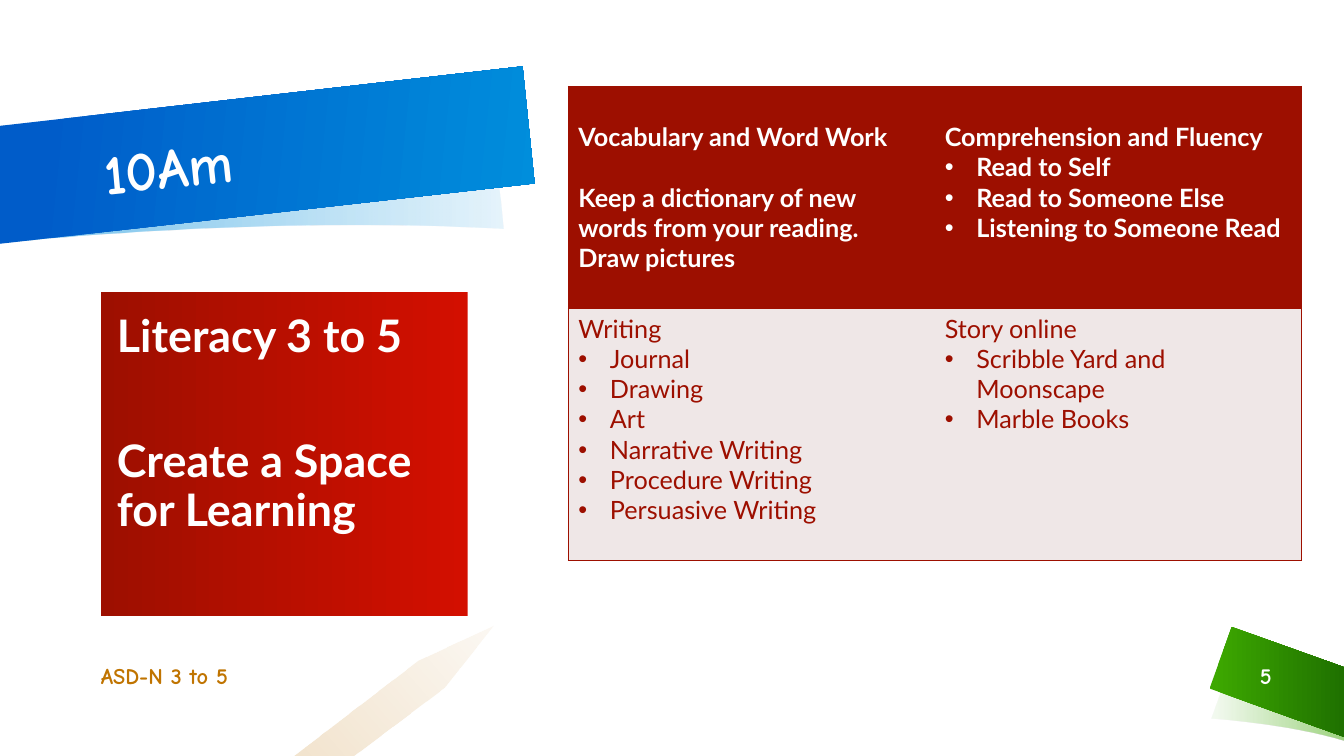
import pptx
import pptx.util
import pptx.dml.color
import pptx.enum.shapes
import pptx.enum.text
import pptx.oxml.ns
import lxml.etree

Pt = pptx.util.Pt
RGB = pptx.dml.color.RGBColor
qn = pptx.oxml.ns.qn
ALIGN = pptx.enum.text.PP_ALIGN
ANCHOR = pptx.enum.text.MSO_ANCHOR

WHITE = RGB(0xFF, 0xFF, 0xFF)
RED, BRIGHT_RED, PALE = RGB(0x9D, 0x0F, 0x00), RGB(0xD3, 0x0F, 0x00), RGB(0xEF, 0xE7, 0xE7)
BLUE, DEEP_BLUE = RGB(0x00, 0x8E, 0xDC), RGB(0x00, 0x5C, 0xC9)
GREEN, DEEP_GREEN = RGB(0x3D, 0xA8, 0x00), RGB(0x1F, 0x71, 0x00)
OCHRE = RGB(0xC0, 0x74, 0x00)
HAND, SANS = "Comic Neue", "Lato"


def curve(p0, p1, p2, p3, steps=16):
    """Points along a cubic curve, both ends included."""
    weights = [((1 - t) ** 3, 3 * t * (1 - t) ** 2, 3 * t * t * (1 - t), t ** 3)
               for t in (i / steps for i in range(steps + 1))]
    return [tuple(sum(w * p[axis] for w, p in zip(ws, (p0, p1, p2, p3)))
                  for axis in (0, 1)) for ws in weights]


class Board:
    def __init__(self, slide):
        self.shapes = slide.shapes

    def gradient(self, shape, stops, angle):
        """Each stop is position in percent, colour, opacity in percent."""
        shape.shadow.inherit = False
        shape.line.fill.background()
        shape.fill.gradient()
        shape.fill.gradient_angle = 360 - angle
        for stop, (position, colour, _) in zip(shape.fill.gradient_stops, stops):
            stop.position = position / 100
            stop.color.rgb = colour
        colours = shape._element.spPr.iter(qn("a:srgbClr"))
        for node, (_, _, opacity) in zip(list(colours), stops):
            if opacity < 100:
                lxml.etree.SubElement(node, qn("a:alpha")).set("val", str(opacity * 1000))

    def outline(self, points, stops, angle):
        points = [(Pt(x), Pt(y)) for x, y in points]
        builder = self.shapes.build_freeform(*points[0])
        builder.add_line_segments(points[1:], close=True)
        self.gradient(builder.convert_to_shape(), stops, angle)

    def block(self, left, top, width, height, stops, angle):
        shape = self.shapes.add_shape(pptx.enum.shapes.MSO_SHAPE.RECTANGLE,
                                      Pt(left), Pt(top), Pt(width), Pt(height))
        self.gradient(shape, stops, angle)
        return shape

    def frame(self, shape, insets, anchor):
        frame = shape.text_frame
        frame.word_wrap = True
        frame.vertical_anchor = anchor
        (frame.margin_left, frame.margin_top,
         frame.margin_right, frame.margin_bottom) = map(Pt, insets)
        return frame

    def run(self, paragraph, text, size, font, colour, bold=True):
        run = paragraph.add_run()
        run.text = text
        run.font.size, run.font.name, run.font.bold = Pt(size), font, bold
        run.font.color.rgb = colour

    def label(self, left, top, width, height, text, size, colour,
              align=ALIGN.LEFT, left_inset=7.2, rotation=0):
        box = self.shapes.add_textbox(Pt(left), Pt(top), Pt(width), Pt(height))
        box.rotation = rotation
        frame = self.frame(box, (left_inset, 3.6, 7.2, 3.6), ANCHOR.MIDDLE)
        frame.paragraphs[0].alignment = align
        self.run(frame.paragraphs[0], text, size, HAND, colour)

    def table(self, left, top, col_width, row_heights):
        table = self.shapes.add_table(len(row_heights), 2, Pt(left), Pt(top),
                                      Pt(2 * col_width), Pt(sum(row_heights))).table
        table.first_row = table.horz_banding = False
        for column in table.columns:
            column.width = Pt(col_width)
        for row, height in zip(table.rows, row_heights):
            row.height = Pt(height)
        return table

    def cell(self, cell, heading, items, fill, colour, bold, sides):
        cell.fill.solid()
        cell.fill.fore_color.rgb = fill
        for index, side in enumerate("LRTB"):
            line = lxml.etree.Element(qn("a:ln" + side), w=str(Pt(1)))
            if side in sides:
                solid = lxml.etree.SubElement(line, qn("a:solidFill"))
                lxml.etree.SubElement(solid, qn("a:srgbClr")).set("val", str(RED))
            else:
                lxml.etree.SubElement(line, qn("a:noFill"))
            cell._tc.get_or_add_tcPr().insert(index, line)
        frame = cell.text_frame
        self.run(frame.paragraphs[0], heading, 18, SANS, colour, bold)
        for item in items:
            paragraph = frame.add_paragraph()
            self.bullet(paragraph)
            self.run(paragraph, item, 18, SANS, colour, bold)

    def bullet(self, paragraph):
        props = paragraph._p.get_or_add_pPr()
        props.set("marL", str(Pt(22.5)))
        props.set("indent", str(-Pt(22.5)))
        lxml.etree.SubElement(props, qn("a:buFont")).set("typeface", "Arial")
        lxml.etree.SubElement(props, qn("a:buChar")).set("char", "•")


def main():
    deck = pptx.Presentation()
    deck.slide_width, deck.slide_height = Pt(960), Pt(540)
    board = Board(deck.slides.add_slide(deck.slide_layouts[6]))

    # Green page-number ribbon
    board.outline(curve((865.4, 513.4), (865.4, 513.4), (920.2, 517), (960, 529.2))
                  + curve((960, 481), (916, 468.7), (881.3, 469.4), (881.3, 469.4)),
                  [(3, GREEN, 6), (100, GREEN, 50)], 0)
    board.outline([(960, 476.6), (879.8, 447.8), (864, 491.8), (960, 526.3)],
                  [(3, GREEN, 100), (100, DEEP_GREEN, 100)], 0)

    # Blue title ribbon
    board.outline(curve((350.6, 81.4), (350.6, 81.4), (225.4, 67.7), (-1.4, 90))
                  + curve((-1.4, 173.5), (205.9, 152.6), (359.3, 163.4), (359.3, 163.4)),
                  [(0, BLUE, 10), (88, BLUE, 50)], 180)
    board.outline([(-0.7, 174.2), (381.9, 131), (373.3, 47.4), (-0.7, 90)],
                  [(9, DEEP_BLUE, 100), (100, BLUE, 100)], 6)

    # Pencil
    board.outline([(352.6, 446.6), (298.8, 471.6), (208.8, 540), (252, 540), (317.5, 491)],
                  [(0, OCHRE, 5), (100, OCHRE, 20)], 139)

    # Title, footer and page number
    board.label(66.2, 66.2, 311.8, 83.5, "10Am", 40, WHITE, rotation=-6)
    board.label(72, 468, 208, 28.8, "ASD-N 3 to 5", 16, OCHRE, left_inset=0)
    board.label(879, 468, 50.4, 28.8, "5", 16, WHITE, align=ALIGN.CENTER)

    # Literacy block
    literacy = board.block(72, 208.8, 262, 231,
                           [(0, BRIGHT_RED, 100), (100, RED, 100)], 180)
    frame = board.frame(literacy, (11.5, 15.5, 8.6, 8.6), ANCHOR.TOP)
    lines = [frame.paragraphs[0], frame.add_paragraph()]
    lines[1].space_before = Pt(54.6)
    for line, text in zip(lines, ["Literacy 3 to 5", "Create a Space for Learning"]):
        line.alignment = ALIGN.LEFT
        line.line_spacing = 0.9
        board.run(line, text, 32, SANS, WHITE)

    # Activity table
    activities = board.table(406, 61.7, 261.7, [158.4, 180])
    content = [
        [("Vocabulary and Word Work", []),
         ("Comprehension and Fluency",
          ["Read to Self", "Read to Someone Else", "Listening to Someone Read"])],
        [("Writing", ["Journal", "Drawing", "Art", "Narrative Writing",
                      "Procedure Writing", "Persuasive Writing"]),
         ("Story online", ["Scribble Yard and Moonscape", "Marble Books"])],
    ]
    styles = [(RED, WHITE, True), (PALE, RED, False)]
    for r, (row, style) in enumerate(zip(content, styles)):
        for c, (heading, items) in enumerate(row):
            board.cell(activities.cell(r, c), heading, items, *style, ("LTB", "RTB")[c])
    for c in range(2):
        activities.cell(0, c).margin_top = Pt(25.2)
    dictionary = activities.cell(0, 0).text_frame.add_paragraph()
    dictionary.space_before = Pt(21.6)
    board.run(dictionary, "Keep a dictionary of new words from your reading. Draw pictures",
              18, SANS, WHITE)

    deck.save("out.pptx")


if __name__ == "__main__":
    main()
